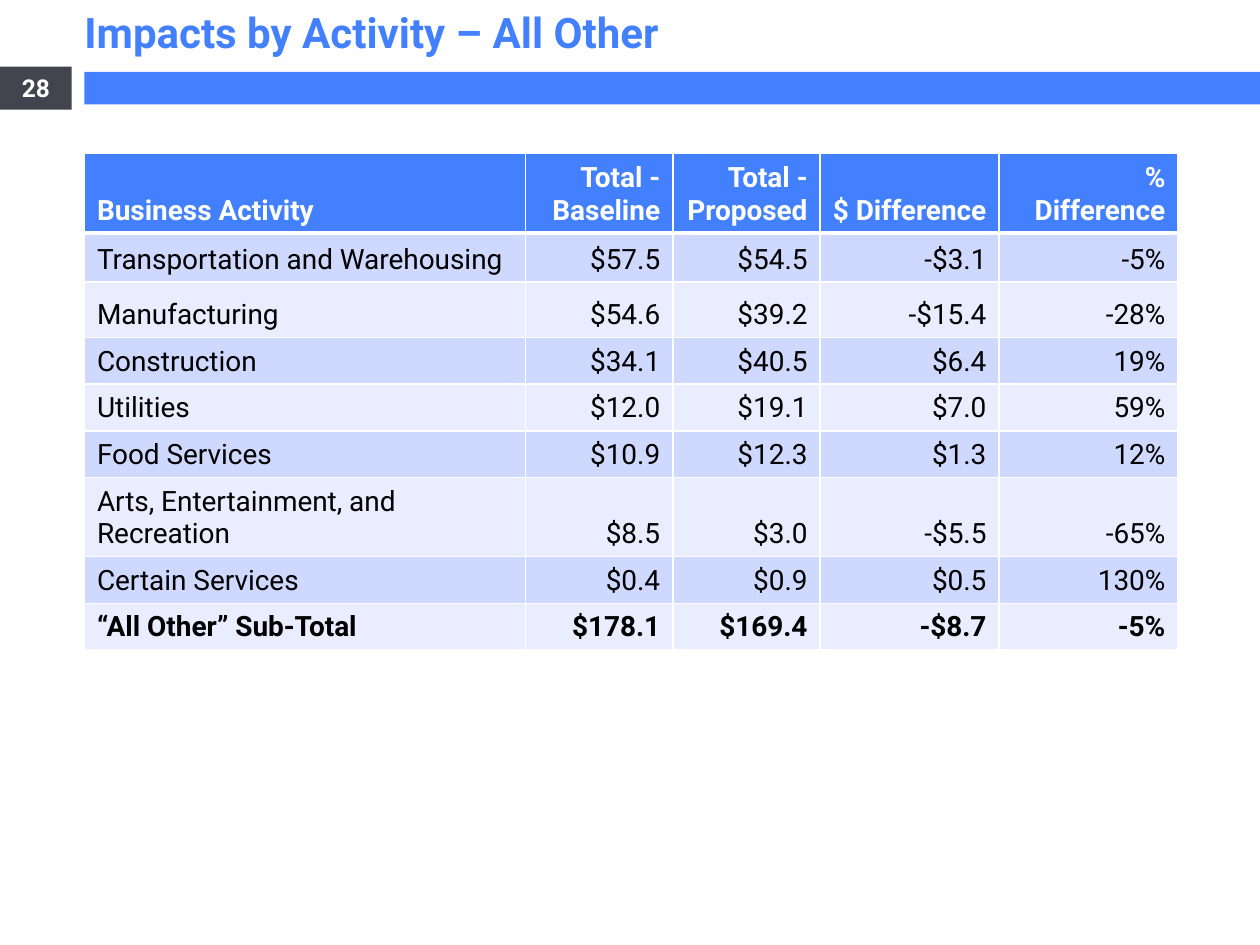
from dataclasses import dataclass

from lxml.etree import SubElement
from pptx import Presentation
from pptx.dml.color import RGBColor
from pptx.enum.shapes import MSO_SHAPE as Shape
from pptx.enum.text import MSO_ANCHOR as Anchor, PP_ALIGN as Align
from pptx.oxml.ns import qn
from pptx.util import Inches, Pt


@dataclass(frozen=True)
class Theme:
    font: str = "Roboto"
    accent: str = "4280FF"
    dark: str = "43444D"
    white: str = "FFFFFF"
    black: str = "000000"
    bands: tuple = ("CFD8FF", "E9EDFF")
    title_size: int = 24
    number_size: int = 14
    table_size: int = 16
    thin_border: int = 1
    thick_border: int = 3


HEADER = ["Business Activity", "Total - Baseline", "Total - Proposed", "$ Difference", "% Difference"]
ACTIVITIES = [
    ["Transportation and Warehousing", "$57.5", "$54.5", "-$3.1", "-5%"],
    ["Manufacturing", "$54.6", "$39.2", "-$15.4", "-28%"],
    ["Construction", "$34.1", "$40.5", "$6.4", "19%"],
    ["Utilities", "$12.0", "$19.1", "$7.0", "59%"],
    ["Food Services", "$10.9", "$12.3", "$1.3", "12%"],
    ["Arts, Entertainment, and Recreation", "$8.5", "$3.0", "-$5.5", "-65%"],
    ["Certain Services", "$0.4", "$0.9", "$0.5", "130%"],
    ["“All Other” Sub-Total", "$178.1", "$169.4", "-$8.7", "-5%"],
]
COLUMN_WIDTHS = [3.5, 1.17, 1.17, 1.42, 1.42]
ROW_HEIGHTS = [0.63, 0.39, 0.44, 0.37, 0.37, 0.37, 0.63, 0.37, 0.37]


def write_text(frame, text, *, font, size, color, bold=False, align=Align.LEFT):
    frame.word_wrap = True
    paragraph = frame.paragraphs[0]
    paragraph.alignment = align
    run = paragraph.add_run()
    run.text = text
    run.font.name = font
    run.font.size = Pt(size)
    run.font.bold = bold
    run.font.color.rgb = RGBColor.from_string(color)


class SlideBuilder:
    def __init__(self, slide, theme):
        self.slide = slide
        self.theme = theme

    def title(self, text, left, top, width, height):
        title = self.slide.shapes.title
        title.left, title.top = Inches(left), Inches(top)
        title.width, title.height = Inches(width), Inches(height)
        title.text_frame.vertical_anchor = Anchor.TOP
        write_text(title.text_frame, text, font=self.theme.font, size=self.theme.title_size,
                   color=self.theme.accent, bold=True)

    def bar(self, left, top, width, height, color):
        bar = self.slide.shapes.add_shape(
            Shape.RECTANGLE, Inches(left), Inches(top), Inches(width), Inches(height))
        bar.shadow.inherit = False
        bar.fill.solid()
        bar.fill.fore_color.rgb = RGBColor.from_string(color)
        bar.line.fill.background()
        return bar

    def page_number(self, text, left, top, width, height):
        box = self.bar(left, top, width, height, self.theme.dark)
        box.text_frame.vertical_anchor = Anchor.MIDDLE
        write_text(box.text_frame, text, font=self.theme.font, size=self.theme.number_size,
                   color=self.theme.white, bold=True, align=Align.CENTER)

    def borders(self, cell, top, bottom):
        properties = cell._tc.get_or_add_tcPr()
        thin = self.theme.thin_border
        for side, width in (("L", thin), ("R", thin), ("T", top), ("B", bottom)):
            line = SubElement(properties, qn(f"a:ln{side}"), w=str(Pt(width)))
            fill = SubElement(line, qn("a:solidFill"))
            SubElement(fill, qn("a:srgbClr"), val=self.theme.white)

    def cell(self, cell, text, row, column, last_row):
        theme = self.theme
        is_header = row == 0
        self.borders(cell,
                     top=theme.thick_border if row == 1 else theme.thin_border,
                     bottom=theme.thick_border if is_header else theme.thin_border)
        fill = theme.accent if is_header else theme.bands[(row - 1) % 2]
        cell.fill.solid()
        cell.fill.fore_color.rgb = RGBColor.from_string(fill)
        cell.vertical_anchor = Anchor.BOTTOM
        write_text(cell.text_frame, text, font=theme.font, size=theme.table_size,
                   color=theme.white if is_header else theme.black,
                   bold=row in (0, last_row),
                   align=Align.RIGHT if column else Align.LEFT)

    def table(self, rows, left, top, column_widths, row_heights):
        table = self.slide.shapes.add_table(
            len(rows), len(column_widths), Inches(left), Inches(top),
            Inches(sum(column_widths)), Inches(sum(row_heights))).table
        for column, width in zip(table.columns, column_widths):
            column.width = Inches(width)
        for row, height in zip(table.rows, row_heights):
            row.height = Inches(height)
        for row, values in enumerate(rows):
            for column, text in enumerate(values):
                self.cell(table.cell(row, column), text, row, column, len(rows) - 1)


def main():
    presentation = Presentation()
    presentation.slide_width, presentation.slide_height = Inches(10), Inches(7.5)
    theme = Theme()
    builder = SlideBuilder(presentation.slides.add_slide(presentation.slide_layouts[5]), theme)
    builder.bar(0.67, 0.57, 9.33, 0.26, theme.accent)
    builder.page_number("28", 0, 0.53, 0.57, 0.34)
    builder.title("Impacts by Activity – All Other", 0.57, 0, 9.43, 0.5)
    builder.table([HEADER, *ACTIVITIES], 0.67, 1.22, COLUMN_WIDTHS, ROW_HEIGHTS)
    presentation.save("out.pptx")


if __name__ == "__main__":
    main()
